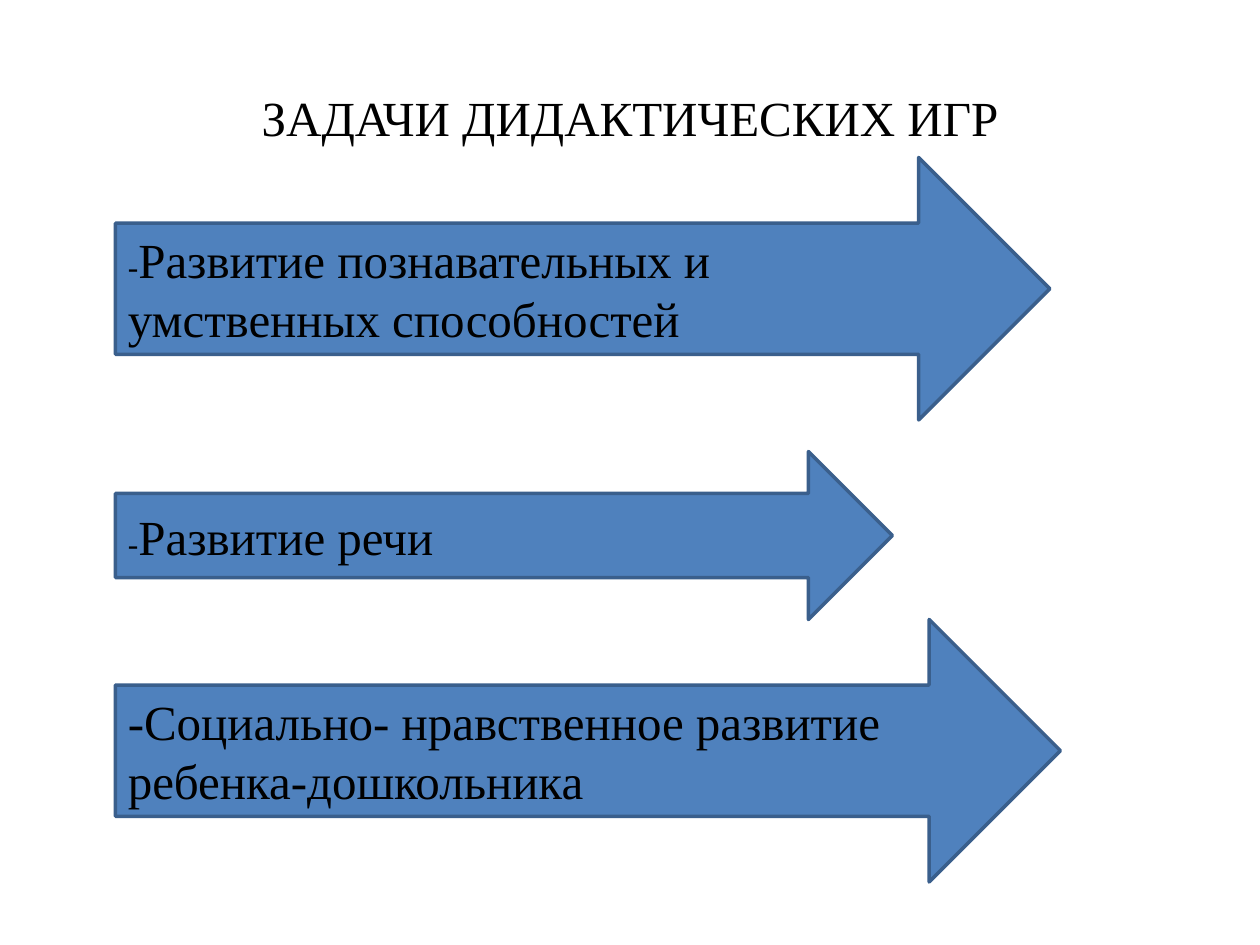
from dataclasses import dataclass

from pptx import Presentation
from pptx.dml.color import RGBColor
from pptx.enum import shapes, text
from pptx.util import Pt


@dataclass(frozen=True)
class Theme:
    font: str = "Times New Roman"
    ink: RGBColor = RGBColor(0x00, 0x00, 0x00)
    fill: RGBColor = RGBColor(0x4F, 0x81, 0xBD)
    outline: RGBColor = RGBColor(0x3A, 0x5F, 0x8C)
    outline_width: float = 2
    body: float = 28
    small: float = 18


THEME = Theme()
ARROW_LEFT = 66

# Each arrow: top, width, height, then its (wording, size) spans
TASKS = [
    (90, 534, 150, [("-", THEME.small),
                    ("Развитие познавательных и умственных способностей", THEME.body)]),
    (258, 444, 96, [("-", THEME.small), ("Развитие речи", THEME.body)]),
    (354, 540, 150, [("-Социально- нравственное развитие ребенка-дошкольника", THEME.body)]),
]


def set_all(target, values):
    for name, value in values.items():
        setattr(target, name, value)


def write(shape, spans, align):
    frame = shape.text_frame
    set_all(frame, {"word_wrap": True, "vertical_anchor": text.MSO_ANCHOR.MIDDLE})
    para = frame.paragraphs[0]
    para.alignment = align
    for wording, size in spans:
        span = para.add_run()
        span.text = wording
        set_all(span.font, {"name": THEME.font, "size": Pt(size)})
        span.font.color.rgb = THEME.ink


def add_title(page, box, wording):
    title = page.shapes.add_textbox(*map(Pt, box))
    write(title, [(wording, THEME.body)], text.PP_ALIGN.CENTER)


def add_task_arrow(page, box, spans):
    arrow = page.shapes.add_shape(shapes.MSO_SHAPE.RIGHT_ARROW, *map(Pt, box))
    arrow.shadow.inherit = False
    arrow.fill.solid()
    arrow.fill.fore_color.rgb = THEME.fill
    arrow.line.color.rgb = THEME.outline
    arrow.line.width = Pt(THEME.outline_width)
    write(arrow, spans, text.PP_ALIGN.LEFT)


def main():
    deck = Presentation()
    set_all(deck, {"slide_width": Pt(720), "slide_height": Pt(540)})
    page = deck.slides.add_slide(deck.slide_layouts[6])

    # Heading
    add_title(page, (36, 21.6, 648, 90), "ЗАДАЧИ ДИДАКТИЧЕСКИХ ИГР")

    # Task arrows
    for top, width, height, spans in TASKS:
        add_task_arrow(page, (ARROW_LEFT, top, width, height), spans)

    deck.save("out.pptx")


if __name__ == "__main__":
    main()
